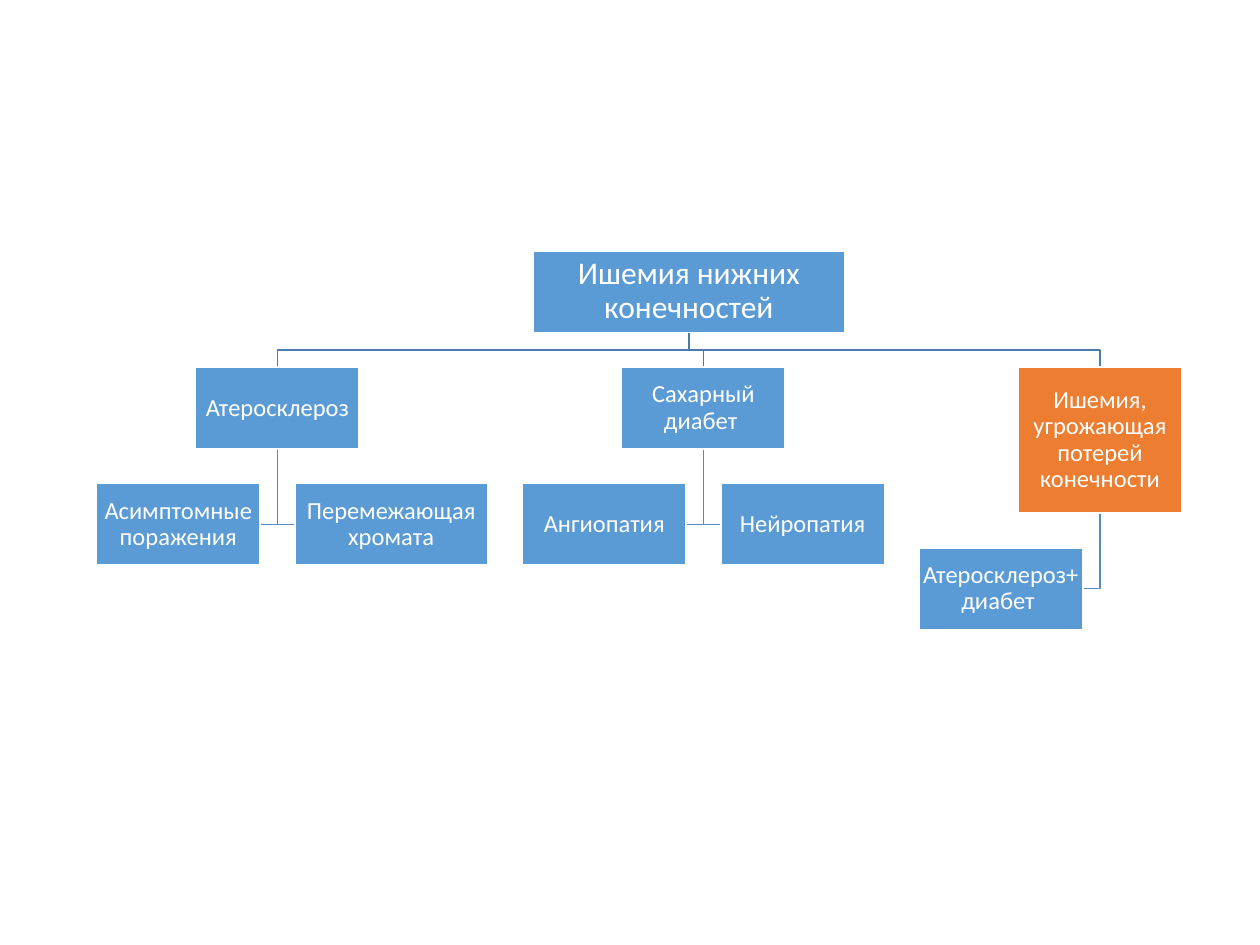
"""Build a slide with a tree of lower limb ischemia causes."""
from dataclasses import dataclass

from pptx import Presentation
from pptx.dml.color import RGBColor
from pptx.enum.shapes import MSO_SHAPE
from pptx.enum.text import MSO_ANCHOR, PP_ALIGN
from pptx.util import Pt


@dataclass(frozen=True)
class Theme:
    font: str = "Calibri"
    root_size: int = 18
    node_size: int = 14
    blue: str = "5B9BD5"
    orange: str = "ED7D31"
    white: str = "FFFFFF"
    upper_line: str = "497CAB"
    lower_line: str = "538DC1"


@dataclass(frozen=True)
class Node:
    text: str
    left: float
    top: float
    width: float = 93.6
    height: float = 46.8
    fill: str = Theme.blue
    size: int = Theme.node_size

    @property
    def center(self):
        return self.left + self.width / 2

    @property
    def middle(self):
        return self.top + self.height / 2

    @property
    def bottom(self):
        return self.top + self.height


THEME = Theme()
GAP = 19.7
NODE_WIDTH = 93.6
ROOT = Node("Ишемия нижних конечностей", 304.8, 143.3, width=177.8, size=THEME.root_size)
BRANCHES = [
    ("Атеросклероз", 158.6, 46.8, THEME.blue,
     [("Асимптомные поражения", 93.6), ("Перемежающая хромата", 110.2)]),
    ("Сахарный диабет ", 402, 46.8, THEME.blue,
     [("Ангиопатия", 93.6), ("Нейропатия", 93.6)]),
    ("Ишемия, угрожающая потерей конечности", 628.6, 83.5, THEME.orange,
     [("Атеросклероз+диабет ", 93.6)]),
]


def add_path(page, points, color):
    start, *rest = [(Pt(x), Pt(y)) for x, y in points]
    builder = page.shapes.build_freeform(*start, scale=1.0)
    builder.add_line_segments(rest, close=False)
    path = builder.convert_to_shape()
    path.shadow.inherit = False
    path.fill.background()
    path.line.color.rgb = RGBColor.from_string(color)
    path.line.width = Pt(1)


def add_node(page, node):
    box = page.shapes.add_shape(
        MSO_SHAPE.RECTANGLE, Pt(node.left), Pt(node.top), Pt(node.width), Pt(node.height))
    box.shadow.inherit = False
    box.fill.solid()
    box.fill.fore_color.rgb = RGBColor.from_string(node.fill)
    box.line.color.rgb = RGBColor.from_string(THEME.white)
    box.line.width = Pt(1)
    frame = box.text_frame
    frame.word_wrap = True
    frame.vertical_anchor = MSO_ANCHOR.MIDDLE
    frame.margin_left = frame.margin_right = Pt(0.7)
    frame.margin_top = frame.margin_bottom = Pt(0.7)
    para = frame.paragraphs[0]
    para.alignment = PP_ALIGN.CENTER
    para.line_spacing = 0.9
    span = para.add_run()
    span.text = node.text
    span.font.name = THEME.font
    span.font.size = Pt(node.size)
    span.font.color.rgb = RGBColor.from_string(THEME.white)


def place_children(parent, labels):
    top = parent.bottom + GAP
    lefts = (parent.center - GAP / 2 - NODE_WIDTH, parent.center + GAP / 2)
    return [Node(text, left, top, width=width)
            for (text, width), left in zip(labels, lefts)]


def link_branch(page, branch):
    turn = ROOT.bottom + GAP / 2
    add_path(page, [(ROOT.center, ROOT.bottom), (ROOT.center, turn),
                    (branch.center, turn), (branch.center, branch.top)], THEME.upper_line)


def link_child(page, branch, child):
    side = child.left if child.left > branch.center else child.left + child.width
    add_path(page, [(branch.center, branch.bottom), (branch.center, child.middle),
                    (side, child.middle)], THEME.lower_line)


def main():
    deck = Presentation()
    deck.slide_width, deck.slide_height = Pt(720), Pt(540)
    page = deck.slides.add_slide(deck.slide_layouts[6])
    nodes = [ROOT]
    for text, center, height, fill, labels in BRANCHES:
        branch = Node(text, center - NODE_WIDTH / 2, ROOT.bottom + GAP,
                      height=height, fill=fill)
        children = place_children(branch, labels)
        link_branch(page, branch)
        for child in children:
            link_child(page, branch, child)
        nodes += [branch, *children]
    for node in nodes:
        add_node(page, node)
    deck.save("out.pptx")


if __name__ == "__main__":
    main()
